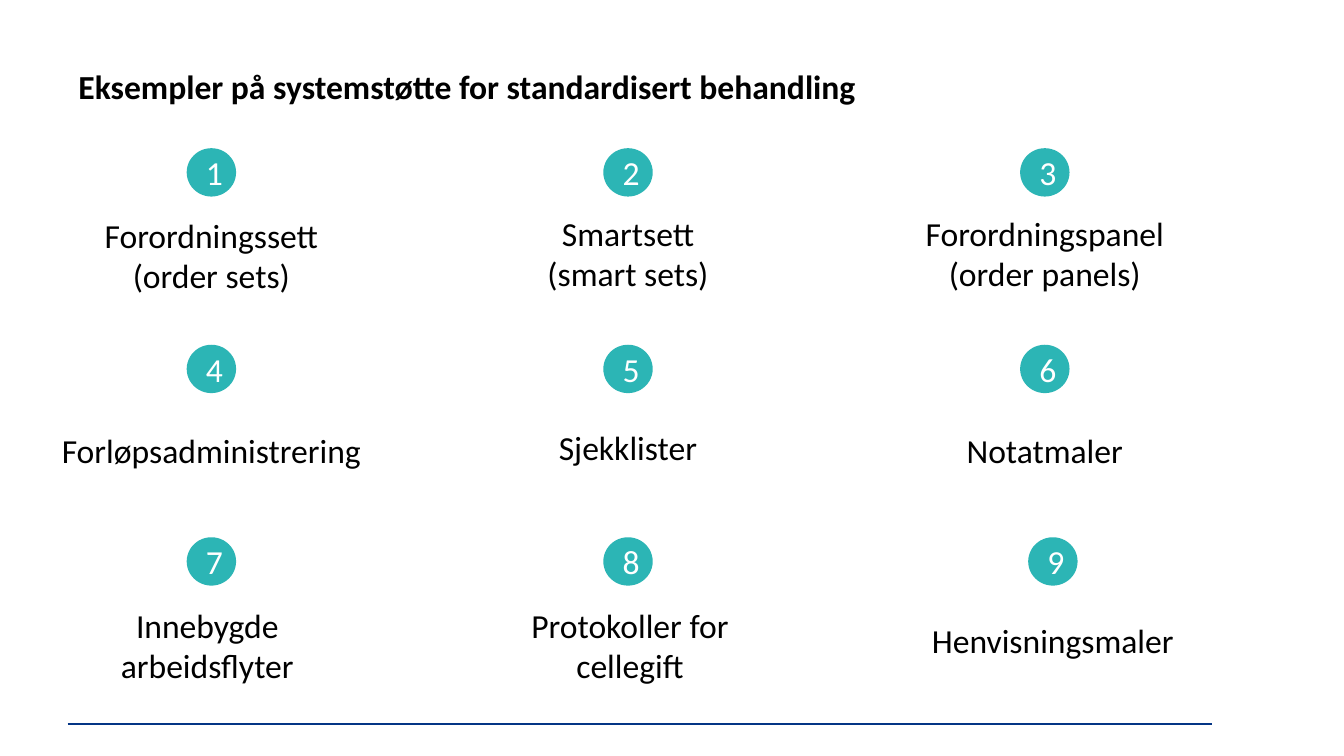
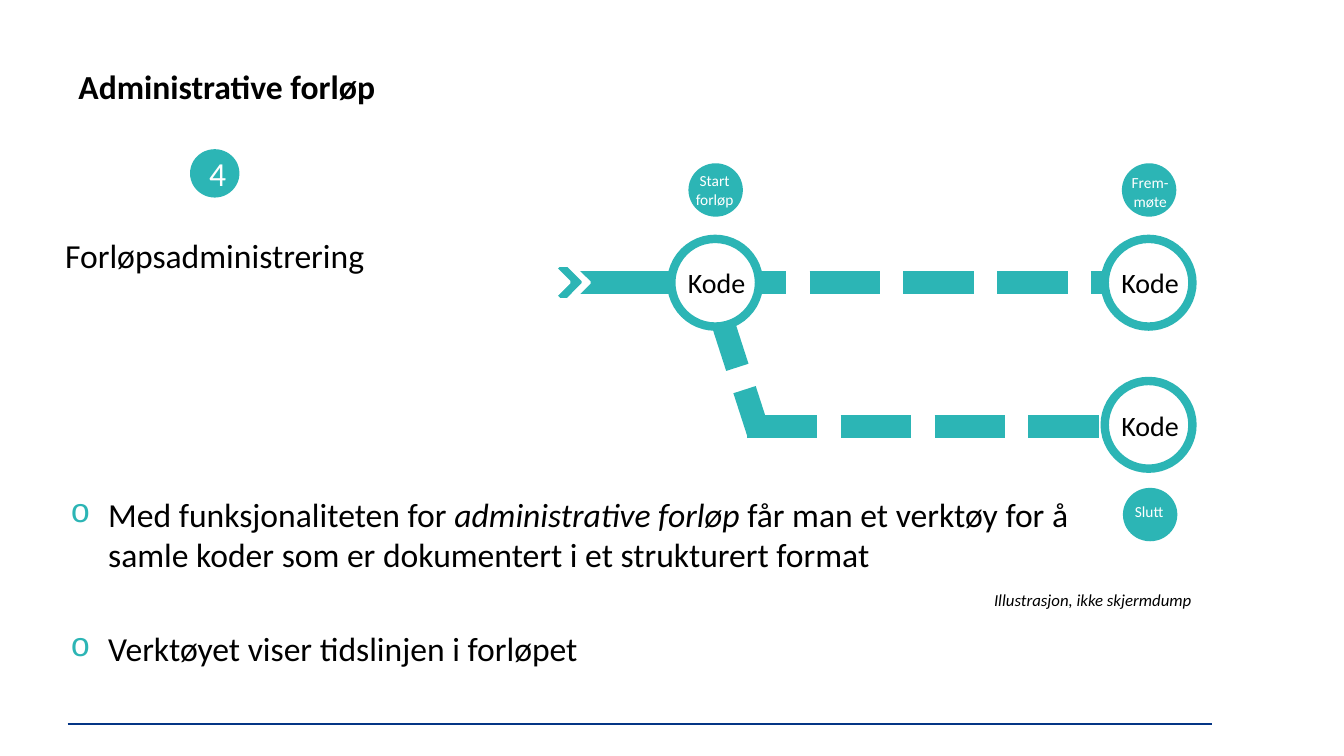
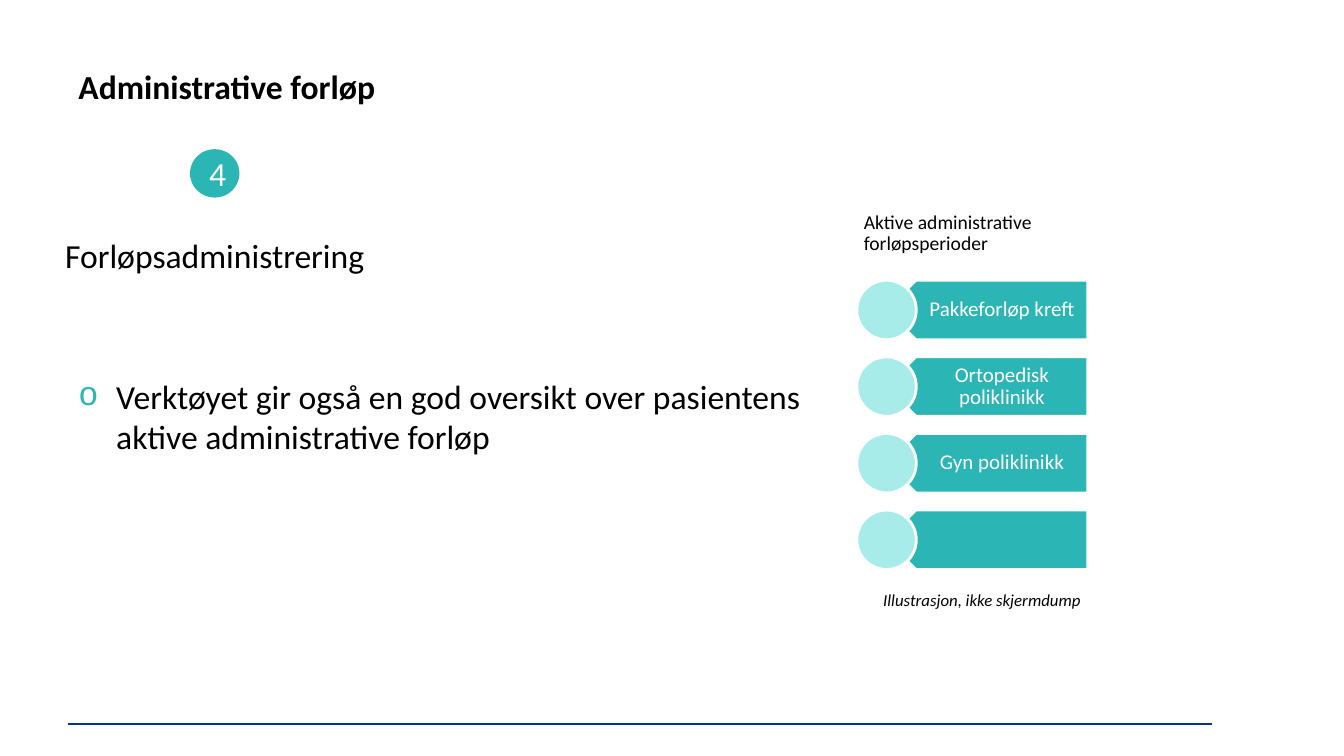
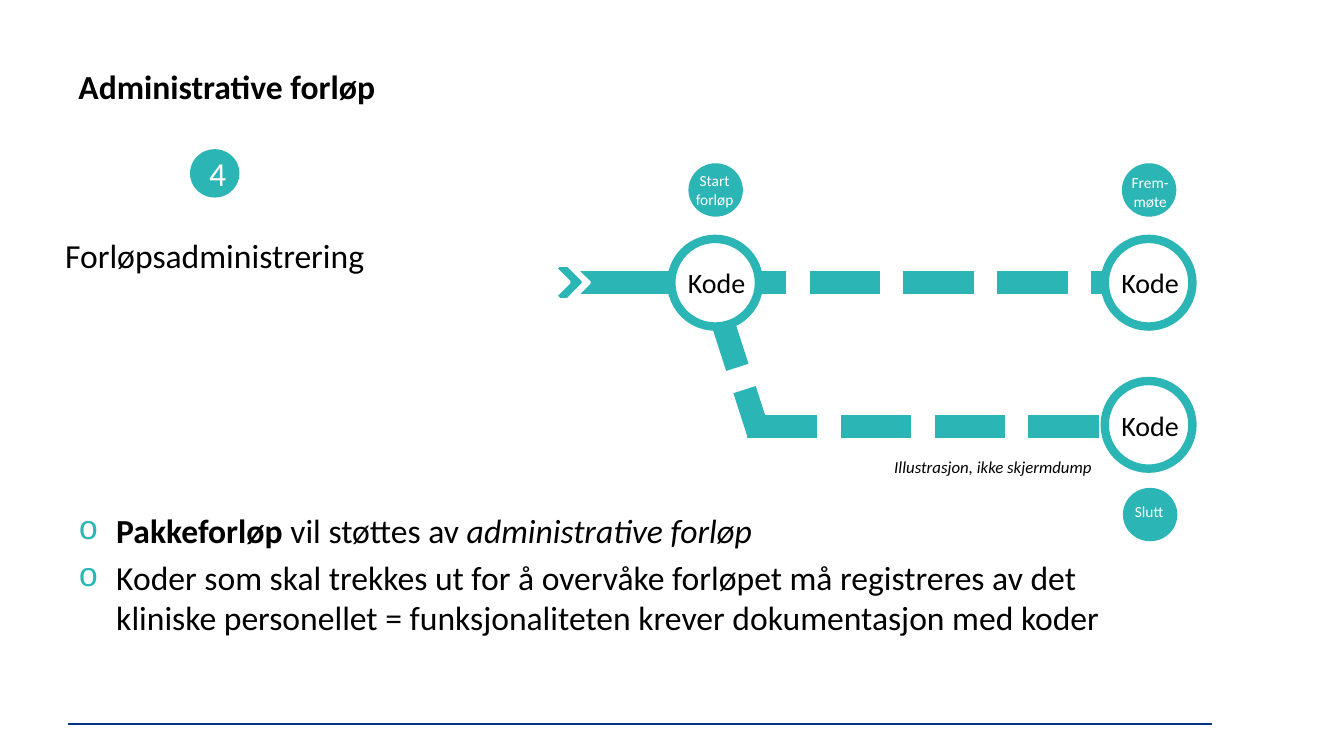
from dataclasses import dataclass
from typing import NamedTuple, Optional

from lxml.etree import SubElement
from pptx import Presentation
from pptx.dml.color import RGBColor
from pptx.enum.dml import MSO_LINE
from pptx.enum.shapes import MSO_CONNECTOR, MSO_SHAPE
from pptx.enum.text import MSO_ANCHOR, PP_ALIGN
from pptx.oxml.ns import qn
from pptx.shapes.autoshape import Shape
from pptx.slide import Slide
from pptx.util import Emu, Pt

# The slide is a grid of square cells: 133.33 columns by 75 rows
COLUMNS, ROWS = 133.33, 75
CELL = 91440


@dataclass(frozen=True)
class Theme:
    font: str = "Calibri"
    bullet_font: str = "Courier New"
    teal: str = "2CB5B5"
    pale_teal: str = "A8ECEA"
    navy: str = "043585"
    white: str = "FFFFFF"
    black: str = "000000"
    text_size: float = 24
    code_size: float = 20
    plate_size: float = 15
    heading_size: float = 14
    note_size: float = 12
    stage_size: float = 11
    track_width: float = 16.75
    ring_width: float = 6
    edge_width: float = 2
    rule_width: float = 1.25


THEME = Theme()


class Box(NamedTuple):
    """Left, top, width and height in grid cells."""
    left: float
    top: float
    width: float
    height: float


class Piece(NamedTuple):
    text: str
    bold: bool = False
    italic: bool = False


class Bullet(NamedTuple):
    pieces: list[Piece]
    space_before: float = 0


@dataclass(frozen=True)
class Topic:
    number: int
    label: str
    drop: float  # rows from the top of the badge to the label
    width: float = 28.3
    shift: float = 0
    label_shift: float = 0


class Track(NamedTuple):
    x1: float
    y1: float
    x2: float
    y2: float
    dashed: bool


class Stage(NamedTuple):
    label: str
    badge: Box
    caption: Box


class Mask(NamedTuple):
    box: Box
    color: str
    rotation: float = 0


TOPICS = [
    Topic(1, "Forordningssett (order sets)", 6.1),
    Topic(2, "Smartsett (smart sets)", 5.9, width=22.8),
    Topic(3, "Forordningspanel (order panels)", 5.9),
    Topic(4, "Forløpsadministrering", 8, width=32),
    Topic(5, "Sjekklister", 7.7),
    Topic(6, "Notatmaler", 8),
    Topic(7, "Innebygde arbeidsflyter", 6.2, label_shift=-0.4),
    Topic(8, "Protokoller for cellegift", 6.2, label_shift=0.2),
    Topic(9, "Henvisningsmaler", 7.7, shift=0.8),
]
TOPIC_CENTERS = (20.97, 62.3, 103.65)
TOPIC_TOPS = (14.7, 34.2, 53.3)

TRACKS = [
    Track(71, 29.8, 75.3, 43.1, True),
    Track(61.7, 28, 113.4, 28, True),
    Track(56.2, 28, 67.5, 28, False),
    Track(74.1, 42.3, 110.5, 42.3, True),
]
RING_PLACES = [(66.6, 23.7), (109.6, 23.7), (109.6, 37.8)]
STAGES = [
    Stage("Start forløp", Box(68.3, 16.2, 5.4, 5.3), Box(67.2, 16.5, 7.4, 5.2)),
    Stage("Frem-møte", Box(111.3, 16.2, 5.4, 5.3), Box(110.4, 16.7, 7.4, 5.2)),
    Stage("Slutt", Box(111.4, 48.4, 5.4, 5.3), Box(110.3, 49.3, 7.4, 3.1)),
]
CHEVRON = [
    Mask(Box(53.3, 25.9, 4.3, 4.3), THEME.white, 44.7),
    Mask(Box(54.7, 26.8, 2.4, 2.4), THEME.teal, 44.7),
    Mask(Box(53.6, 26.8, 2.4, 2.4), THEME.white, 44.7),
    Mask(Box(54.3, 29.7, 6.5, 3.5), THEME.white),
    Mask(Box(54.2, 22.9, 6.5, 3.5), THEME.white),
]
PLATES = ["Pakkeforløp kreft", "Ortopedisk poliklinikk", "Gyn poliklinikk", ""]
PLATE_TOP, PLATE_STEP, PLATE_HEIGHT = 27.8, 7.6, 5.9


# Drawing helpers
def cells(count: float) -> Emu:
    return Emu(round(count * CELL))


def place(box: Box) -> tuple[Emu, Emu, Emu, Emu]:
    return cells(box.left), cells(box.top), cells(box.width), cells(box.height)


def rgb(color: str) -> RGBColor:
    return RGBColor.from_string(color)


def add_run(paragraph, piece: Piece, size: float, color: str = THEME.black) -> None:
    run = paragraph.add_run()
    run.text = piece.text
    run.font.name = THEME.font
    run.font.size = Pt(size)
    run.font.color.rgb = rgb(color)
    run.font.bold = piece.bold
    run.font.italic = piece.italic


def add_text(slide: Slide, box: Box, piece: Piece, size: float = THEME.text_size,
             color: str = THEME.black, align: PP_ALIGN = PP_ALIGN.LEFT) -> Shape:
    shape = slide.shapes.add_textbox(*place(box))
    shape.text_frame.word_wrap = True
    paragraph = shape.text_frame.paragraphs[0]
    paragraph.alignment = align
    add_run(paragraph, piece, size, color)
    return shape


def add_figure(slide: Slide, preset: MSO_SHAPE, box: Box, fill: str,
               line: Optional[str] = None, line_width: float = THEME.edge_width) -> Shape:
    shape = slide.shapes.add_shape(preset, *place(box))
    shape.shadow.inherit = False
    shape.fill.solid()
    shape.fill.fore_color.rgb = rgb(fill)
    if line:
        shape.line.color.rgb = rgb(line)
        shape.line.width = Pt(line_width)
    else:
        shape.line.fill.background()
    return shape


def write_inside(shape: Shape, text: str, size: float, color: str,
                 left_inset: float = 0) -> None:
    frame = shape.text_frame
    frame.word_wrap = False
    frame.vertical_anchor = MSO_ANCHOR.MIDDLE
    frame.margin_left = cells(left_inset)
    frame.margin_right = frame.margin_top = frame.margin_bottom = 0
    paragraph = frame.paragraphs[0]
    paragraph.alignment = PP_ALIGN.CENTER
    add_run(paragraph, Piece(text), size, color)


def add_line(slide: Slide, track: Track, color: str, width: float) -> None:
    connector = slide.shapes.add_connector(
        MSO_CONNECTOR.STRAIGHT, cells(track.x1), cells(track.y1),
        cells(track.x2), cells(track.y2))
    connector.line.color.rgb = rgb(color)
    connector.line.width = Pt(width)
    if track.dashed:
        connector.line.dash_style = MSO_LINE.SQUARE_DOT
        preset = connector.line._ln.find(qn("a:prstDash"))
        preset.set("val", "sysDash")
    SubElement(connector._element.spPr, qn("a:effectLst"))


def add_bullets(slide: Slide, box: Box, bullets: list[Bullet]) -> None:
    frame = slide.shapes.add_textbox(*place(box)).text_frame
    frame.word_wrap = True
    for index, bullet in enumerate(bullets):
        paragraph = frame.add_paragraph() if index else frame.paragraphs[0]
        if bullet.space_before:
            paragraph.space_before = Pt(bullet.space_before)
        properties = paragraph._p.get_or_add_pPr()
        properties.set("marL", str(cells(3.75)))
        properties.set("indent", str(-cells(3.75)))
        color = SubElement(properties, qn("a:buClr"))
        SubElement(color, qn("a:srgbClr"), val=THEME.teal)
        SubElement(properties, qn("a:buFont"), typeface=THEME.bullet_font)
        SubElement(properties, qn("a:buChar"), char="o")
        for piece in bullet.pieces:
            add_run(paragraph, piece, THEME.text_size)


# Parts shared by the slides
def add_slide(presentation: Presentation, title: str) -> Slide:
    slide = presentation.slides.add_slide(presentation.slide_layouts[6])
    add_line(slide, Track(6.7, 71.8, 120.2, 71.8, False), THEME.navy, THEME.rule_width)
    add_text(slide, Box(6.8, 6, 104.7, 5), Piece(title, bold=True))
    return slide


def add_topic(slide: Slide, topic: Topic, center: float, top: float) -> None:
    center += topic.shift
    badge = add_figure(slide, MSO_SHAPE.OVAL, Box(center - 2.45, top, 4.9, 4.8), THEME.teal)
    write_inside(badge, str(topic.number), THEME.text_size, THEME.white, left_inset=0.6)
    left = center + topic.label_shift - topic.width / 2
    add_text(slide, Box(left, top + topic.drop, topic.width, 5), Piece(topic.label),
             align=PP_ALIGN.CENTER)


def add_pathway_slide(presentation: Presentation) -> Slide:
    slide = add_slide(presentation, "Administrative forløp")
    add_topic(slide, TOPICS[3], 21.3, 14.8)
    return slide


def add_note(slide: Slide, left: float, top: float) -> None:
    add_text(slide, Box(left, top, 30.5, 3.7),
             Piece("Illustrasjon, ikke skjermdump", italic=True),
             THEME.note_size, align=PP_ALIGN.RIGHT)


def add_timeline(slide: Slide) -> None:
    for track in TRACKS:
        add_line(slide, track, THEME.teal, THEME.track_width)
    for left, top in RING_PLACES:
        ring = add_figure(slide, MSO_SHAPE.OVAL, Box(left, top, 8.7, 8.7),
                          THEME.white, THEME.teal, THEME.ring_width)
        write_inside(ring, "Kode", THEME.code_size, THEME.black, left_inset=0.3)
    for stage in STAGES:
        add_figure(slide, MSO_SHAPE.OVAL, stage.badge, THEME.teal)
        add_text(slide, stage.caption, Piece(stage.label), THEME.stage_size,
                 THEME.white, PP_ALIGN.CENTER)
    for mask in CHEVRON:
        shape = add_figure(slide, MSO_SHAPE.RECTANGLE, mask.box, mask.color, mask.color)
        shape.rotation = mask.rotation


def add_plate_text(slide: Slide, box: Box, text: str, size: float, color: str,
                   align: PP_ALIGN) -> None:
    frame = add_text(slide, box, Piece(text), size, color, align).text_frame
    frame.vertical_anchor = MSO_ANCHOR.MIDDLE
    frame.margin_left, frame.margin_right = cells(2.6), cells(1.2)
    frame.margin_top = frame.margin_bottom = cells(0.6)
    frame.paragraphs[0].line_spacing = 0.9


def add_plates(slide: Slide) -> None:
    add_plate_text(slide, Box(83.1, 20.2, 28.3, PLATE_HEIGHT),
                   "Aktive administrative forløpsperioder",
                   THEME.heading_size, THEME.black, PP_ALIGN.LEFT)
    for row, label in enumerate(PLATES):
        top = PLATE_TOP + row * PLATE_STEP
        plate = add_figure(slide, MSO_SHAPE.PENTAGON, Box(87.9, top, 20, PLATE_HEIGHT),
                           THEME.teal, THEME.white)
        plate.rotation = 180
        if label:
            add_plate_text(slide, Box(89.4, top, 18.6, PLATE_HEIGHT), label,
                           THEME.plate_size, THEME.white, PP_ALIGN.CENTER)
        add_figure(slide, MSO_SHAPE.OVAL, Box(85, top, PLATE_HEIGHT, PLATE_HEIGHT),
                   THEME.pale_teal, THEME.white)


# Slides
def build_overview(presentation: Presentation) -> None:
    slide = add_slide(presentation, "Eksempler på systemstøtte for standardisert behandling")
    for index, topic in enumerate(TOPICS):
        row, column = divmod(index, len(TOPIC_CENTERS))
        add_topic(slide, topic, TOPIC_CENTERS[column], TOPIC_TOPS[row])


def build_timeline(presentation: Presentation) -> None:
    slide = add_pathway_slide(presentation)
    add_bullets(slide, Box(6, 48.5, 104.7, 20), [
        Bullet([Piece("Med funksjonaliteten for "),
                Piece("administrative forløp", italic=True),
                Piece(" får man et verktøy for å samle koder som er "
                      "dokumentert i et strukturert format")]),
        Bullet([Piece("Verktøyet viser tidslinjen i forløpet")], space_before=38),
    ])
    add_timeline(slide)
    add_note(slide, 88.7, 58)


def build_active_pathways(presentation: Presentation) -> None:
    slide = add_pathway_slide(presentation)
    add_bullets(slide, Box(6.8, 36.8, 74.6, 28.5), [
        Bullet([Piece("Verktøyet gir også en god oversikt over pasientens "
                      "aktive administrative forløp")]),
    ])
    add_plates(slide)
    add_note(slide, 77.7, 58)


def build_care_packages(presentation: Presentation) -> None:
    slide = add_pathway_slide(presentation)
    add_bullets(slide, Box(6.8, 50.1, 104.7, 20), [
        Bullet([Piece("Pakkeforløp", bold=True), Piece(" vil støttes av "),
                Piece("administrative forløp", italic=True)]),
        Bullet([Piece("Koder som skal trekkes ut for å overvåke forløpet må "
                      "registreres av det kliniske personellet = funksjonaliteten "
                      "krever dokumentasjon med koder")], space_before=4.8),
    ])
    add_timeline(slide)
    add_note(slide, 78.8, 44.8)


def main() -> None:
    presentation = Presentation()
    presentation.slide_width = cells(COLUMNS)
    presentation.slide_height = cells(ROWS)
    build_overview(presentation)
    build_timeline(presentation)
    build_active_pathways(presentation)
    build_care_packages(presentation)
    presentation.save("out.pptx")


if __name__ == "__main__":
    main()
